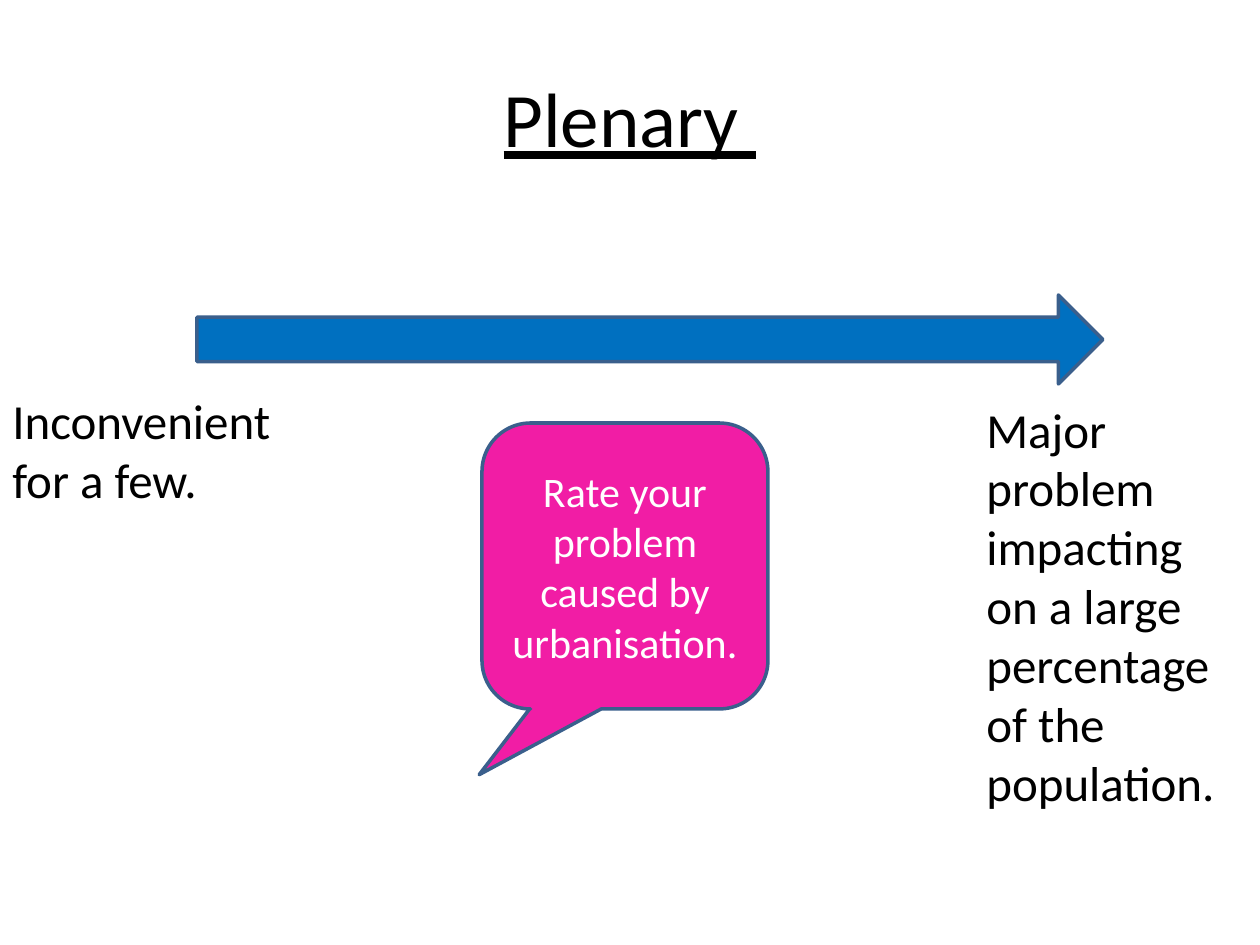
from pptx import Presentation
from pptx.dml.color import RGBColor
from pptx.enum.shapes import MSO_SHAPE as Shape
from pptx.enum.text import MSO_ANCHOR as Anchor, PP_ALIGN as Align
from pptx.util import Emu, Pt

PX = 914400 // 126
BLACK = RGBColor(0x00, 0x00, 0x00)
WHITE = RGBColor(0xFF, 0xFF, 0xFF)
BLUE = RGBColor(0x00, 0x70, 0xC0)
PINK = RGBColor(0xF1, 0x1D, 0xA5)
OUTLINE = RGBColor(0x3A, 0x5F, 0x8C)


class SlideBuilder:
    font = "Calibri"
    line_width = Pt(2)

    def __init__(self, slide):
        self.slide = slide

    def box(self, *lengths):
        return [Emu(length * PX) for length in lengths]

    def set_text(self, shape, text, size, color, align, anchor,
                 underline=None):
        frame = shape.text_frame
        frame.word_wrap = True
        frame.vertical_anchor = anchor
        frame.text = text
        paragraph = frame.paragraphs[0]
        paragraph.alignment = align
        font = paragraph.runs[0].font
        font.name, font.size, font.underline = self.font, Pt(size), underline
        font.color.rgb = color

    def label(self, box, text, size=28, align=Align.LEFT, anchor=Anchor.TOP,
              underline=None):
        label = self.slide.shapes.add_textbox(*self.box(*box))
        self.set_text(label, text, size, BLACK, align, anchor, underline)

    def shape(self, kind, box, fill, adjustments=()):
        shape = self.slide.shapes.add_shape(kind, *self.box(*box))
        shape.shadow.inherit = False
        shape.fill.solid()
        shape.fill.fore_color.rgb = fill
        shape.line.color.rgb = OUTLINE
        shape.line.width = self.line_width
        for index, value in enumerate(adjustments):
            shape.adjustments[index] = value
        return shape

    def callout(self, box, text, adjustments):
        bubble = self.shape(Shape.ROUNDED_RECTANGULAR_CALLOUT, box, PINK,
                            adjustments)
        self.set_text(bubble, text, 24, WHITE, Align.CENTER, Anchor.MIDDLE)


def main():
    presentation = Presentation()
    presentation.slide_width = Emu(1260 * PX)
    presentation.slide_height = Emu(945 * PX)
    builder = SlideBuilder(
        presentation.slides.add_slide(presentation.slide_layouts[6]))

    # Title
    builder.label((63, 38, 1134, 157), "Plenary ", 44, Align.CENTER,
                  Anchor.MIDDLE, underline=True)

    # Severity scale and the question
    builder.shape(Shape.RIGHT_ARROW, (197, 295, 906, 89), BLUE)
    builder.callout((482, 423, 286, 286),
                    "Rate your problem caused by urbanisation.",
                    (-0.51, 0.73, 0.17))

    # Labels at the two ends of the scale
    builder.label((0, 384, 315, 131), "Inconvenient for a few.")
    builder.label((974, 393, 256, 428),
                  "Major problem impacting on a large percentage of the "
                  "population.")

    presentation.save("out.pptx")


if __name__ == "__main__":
    main()
